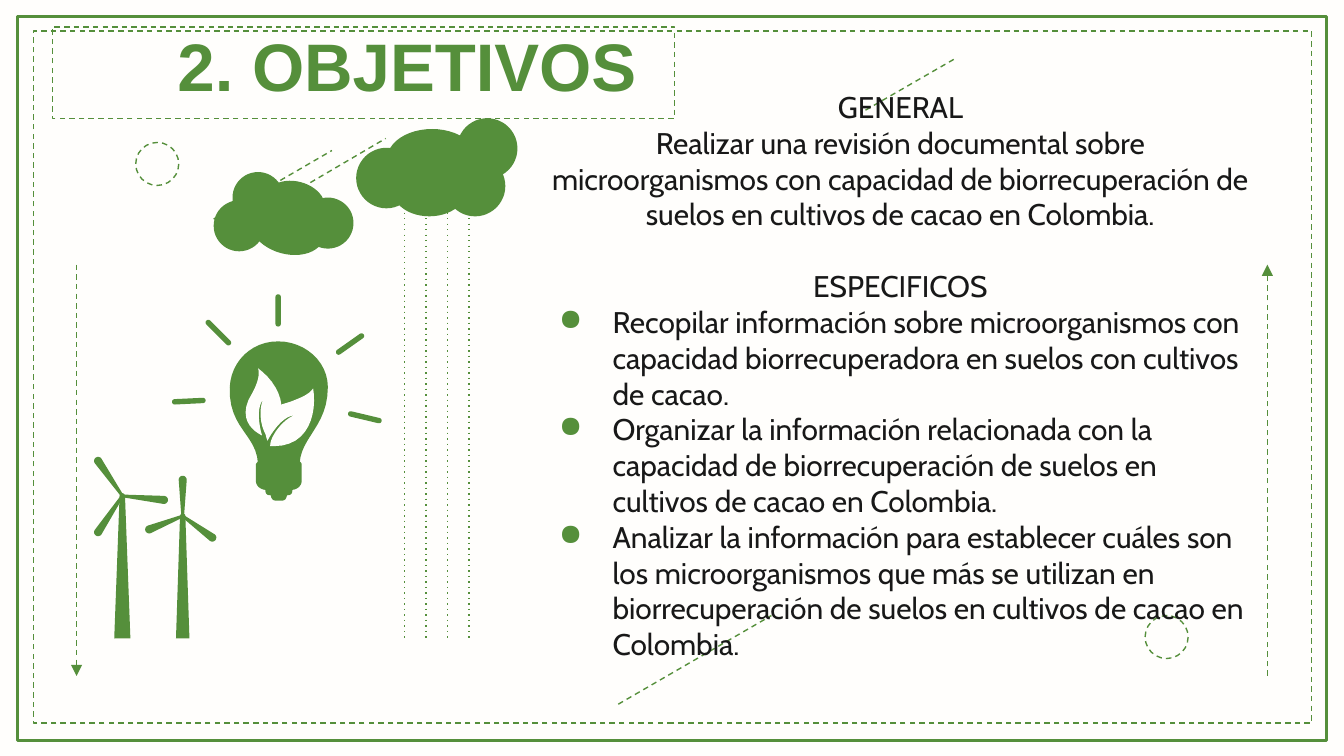
from dataclasses import dataclass
from math import atan2, cos, pi, sin
from typing import Optional

from lxml.etree import SubElement
from pptx import Presentation
from pptx.dml.color import RGBColor
from pptx.enum.shapes import MSO_CONNECTOR, MSO_SHAPE
from pptx.enum.text import MSO_ANCHOR, MSO_AUTO_SIZE, PP_ALIGN
from pptx.oxml.ns import qn
from pptx.util import Emu, Inches, Pt

GREEN = RGBColor(0x55, 0x8F, 0x3B)
CREAM = RGBColor(0xFF, 0xFE, 0xFC)
INK = RGBColor(0x18, 0x18, 0x18)
SLIDE_WIDTH, SLIDE_HEIGHT = Inches(10), Inches(5.625)
CELL = SLIDE_WIDTH // 10  # square grid: ten columns across the slide

Point = tuple[float, float]


@dataclass(frozen=True)
class Area:
    """A place on the grid, in columns and rows."""
    left: float
    top: float
    width: float
    height: float

    def emu(self) -> list[Emu]:
        return [cells(v) for v in (self.left, self.top, self.width, self.height)]


@dataclass(frozen=True)
class Stroke:
    start: Point
    end: Point
    dash: str = "dash"
    arrow: bool = False


@dataclass(frozen=True)
class Cloud:
    puffs: tuple[Area, ...]
    rotation: float = 0
    rain: tuple[Stroke, ...] = ()


@dataclass(frozen=True)
class Turbine:
    hub: Point
    foot_half_width: float
    blade_tips: tuple[Point, ...]


@dataclass(frozen=True)
class Outline:
    """Steps are line ends (2 numbers) or Bezier curves (6 numbers)."""
    steps: tuple[tuple[float, ...], ...]
    fill: RGBColor = GREEN
    edged: bool = False


GROUND = 4.75
FRAMES = ((Area(0.13, 0.12, 9.74, 5.39), 1.5, None),
          (Area(0.25, 0.23, 9.51, 5.15), 0.75, "dash"))
RINGS = (Area(1.01, 1.06, 0.32, 0.32), Area(8.52, 4.58, 0.32, 0.32))
STROKES = (
    Stroke((4.6, 5.24), (5.74, 4.58)), Stroke((6.44, 0.82), (7.1, 0.44)),
    Stroke((0.57, 1.97), (0.57, 5.03), arrow=True),
    Stroke((9.43, 5.03), (9.43, 1.97), arrow=True),
    Stroke((2, 1.54), (2.87, 1.03)), Stroke((1.59, 1.63), (2.47, 1.12)),
)
CLOUDS = (
    Cloud((Area(2.25, 1.47, 0.38, 0.38), Area(1.86, 1.51, 0.56, 0.38),
           Area(1.98, 1.35, 0.44, 0.3), Area(1.59, 1.49, 0.38, 0.38),
           Area(1.73, 1.28, 0.38, 0.38)), rotation=195),
    Cloud((Area(2.65, 1.1, 0.45, 0.45), Area(2.88, 0.96, 0.67, 0.45),
           Area(2.93, 1.25, 0.53, 0.36), Area(3.4, 0.88, 0.45, 0.45),
           Area(3.31, 1.16, 0.45, 0.45)),
          rain=tuple(Stroke((3.01 + 0.16 * i, 1.5), (3.01 + 0.16 * i, GROUND), "dot")
                     for i in range(4))),
)
TURBINES = (
    Turbine((0.91, 3.69), 0.06, ((0.73, 3.43), (1.22, 3.72), (0.73, 3.96))),
    Turbine((1.36, 3.84), 0.05, ((1.36, 3.57), (1.58, 4), (1.11, 3.94))),
)
BULB = (
    Outline(((2.02, 3.68), (2.02, 3.7, 2.03, 3.72, 2.05, 3.72), (2.1, 3.72),
             (2.12, 3.72, 2.13, 3.7, 2.13, 3.68)), edged=True),
    Outline(((2.07, 2.54), (1.87, 2.54, 1.72, 2.69, 1.71, 2.88),
             (1.7, 3.19, 1.91, 3.23, 1.92, 3.45), (2.23, 3.45),
             (2.24, 3.25, 2.44, 3.17, 2.44, 2.88),
             (2.44, 2.69, 2.27, 2.54, 2.07, 2.54))),
    Outline(((1.93, 3.44), (1.92, 3.44, 1.91, 3.45, 1.91, 3.46), (1.91, 3.58),
             (1.91, 3.61, 1.94, 3.64, 1.98, 3.64), (2.17, 3.64),
             (2.21, 3.64, 2.24, 3.61, 2.24, 3.58), (2.24, 3.46),
             (2.24, 3.45, 2.24, 3.45, 2.23, 3.44)), edged=True),
    Outline(((1.98, 3.64), (1.98, 3.65), (1.98, 3.67, 1.99, 3.68, 2.01, 3.68),
             (2.14, 3.68), (2.16, 3.68, 2.17, 3.67, 2.17, 3.65), (2.17, 3.64)),
            edged=True),
)
LEAVES = (
    Outline(((1.92, 2.74), (1.94, 2.8, 1.9, 2.88, 1.88, 2.92),
             (1.73, 3.15, 1.95, 3.24, 1.95, 3.24),
             (1.95, 3.24, 1.89, 3.05, 1.96, 2.97),
             (1.92, 3.05, 1.94, 3.19, 1.99, 3.25),
             (2.19, 3.07, 2.07, 2.85, 1.92, 2.74)), CREAM),
    Outline(((2.33, 2.89), (2.3, 2.94, 2.21, 2.97, 2.16, 2.99),
             (1.89, 3.05, 1.99, 3.28, 1.99, 3.28),
             (1.99, 3.28, 2.08, 3.1, 2.19, 3.09),
             (2.11, 3.12, 2.01, 3.24, 2.01, 3.32),
             (2.02, 3.32, 2.03, 3.32, 2.04, 3.32),
             (2.3, 3.32, 2.36, 3.07, 2.33, 2.89)), CREAM),
)
RAYS = (((2.07, 2.21), (2.07, 2.41)), ((2.69, 2.5), (2.52, 2.62)),
        ((2.61, 3.08), (2.82, 3.13)), ((1.51, 2.98), (1.3, 2.99)),
        ((1.55, 2.4), (1.7, 2.55)))

GENERAL = ("Realizar una revisión documental sobre microorganismos con capacidad de "
           "biorrecuperación de suelos en cultivos de cacao en Colombia.")
SPECIFIC = (
    "Recopilar información sobre microorganismos con capacidad biorrecuperadora en "
    "suelos con cultivos de cacao.",
    "Organizar la información relacionada con la capacidad de biorrecuperación de "
    "suelos en cultivos de cacao en Colombia.",
    "Analizar la información para establecer cuáles son los microorganismos que más se "
    "utilizan en biorrecuperación de suelos en cultivos de cacao en Colombia.",
)


def cells(count: float) -> Emu:
    return Emu(round(count * CELL))


def style_line(shape, width: float = 0.75, dash: Optional[str] = None) -> None:
    shape.line.color.rgb = GREEN
    shape.line.width = Pt(width)
    if dash:
        SubElement(shape.get_or_add_ln(), qn("a:prstDash"), val=dash)


def style_fill(shape, fill: Optional[RGBColor]) -> None:
    shape.shadow.inherit = False
    if fill is None:
        shape.fill.background()
    else:
        shape.fill.solid()
        shape.fill.fore_color.rgb = fill


def add_preset(shapes, kind, area: Area, fill: Optional[RGBColor]):
    shape = shapes.add_shape(kind, *area.emu())
    style_fill(shape, fill)
    return shape


def add_stroke(shapes, stroke: Stroke) -> None:
    ends = [cells(v) for v in stroke.start + stroke.end]
    connector = shapes.add_connector(MSO_CONNECTOR.STRAIGHT, *ends)
    style_line(connector, dash=stroke.dash)
    if stroke.arrow:
        SubElement(connector.get_or_add_ln(), qn("a:tailEnd"), type="triangle")
    SubElement(connector.element.spPr, qn("a:effectLst"))


def add_polygon(shapes, points: list[Point], fill: RGBColor = GREEN):
    corners = [(cells(x), cells(y)) for x, y in points]
    builder = shapes.build_freeform(*corners[0])
    builder.add_line_segments(corners[1:], close=True)
    shape = builder.convert_to_shape()
    style_fill(shape, fill)
    shape.line.fill.background()
    return shape


def add_outline(shapes, outline: Outline, samples: int = 12) -> None:
    points: list[Point] = []
    for step in outline.steps:
        if len(step) == 2:
            points.append(step)
            continue
        controls = (points[-1], step[:2], step[2:4], step[4:])
        for i in range(1, samples + 1):
            t = i / samples
            weights = ((1 - t) ** 3, 3 * t * (1 - t) ** 2, 3 * t * t * (1 - t), t ** 3)
            points.append(tuple(sum(w * c[axis] for w, c in zip(weights, controls))
                                for axis in (0, 1)))
    shape = add_polygon(shapes, points, outline.fill)
    if outline.edged:
        style_line(shape)


def add_bar(shapes, start: Point, end: Point, start_radius: float, end_radius: float) -> None:
    """Draw a round-ended bar that may taper."""
    heading = atan2(end[1] - start[1], end[0] - start[0])
    points = []
    for (x, y), radius, turn in ((end, end_radius, -pi / 2), (start, start_radius, pi / 2)):
        angles = [heading + turn + pi * i / 8 for i in range(9)]
        points += [(x + radius * cos(a), y + radius * sin(a)) for a in angles]
    add_polygon(shapes, points)


def add_cloud(shapes, cloud: Cloud) -> None:
    group = shapes.add_group_shape().shapes
    for area in cloud.puffs:
        puff = add_preset(group, MSO_SHAPE.OVAL, area, GREEN)
        puff.line.fill.background()
        puff.rotation = cloud.rotation
    for drop in cloud.rain:
        add_stroke(group, drop)


def add_turbine(shapes, turbine: Turbine, radius: float = 0.02) -> None:
    x, y = turbine.hub
    foot = turbine.foot_half_width
    add_polygon(shapes, [(x - radius, y), (x - foot, GROUND), (x + foot, GROUND), (x + radius, y)])
    hub = add_preset(shapes, MSO_SHAPE.OVAL,
                     Area(x - radius, y - radius, 2 * radius, 2 * radius), GREEN)
    hub.line.fill.background()
    for tip in turbine.blade_tips:
        add_bar(shapes, turbine.hub, tip, 0.01, 0.03)


def add_bulb(shapes) -> None:
    group = shapes.add_group_shape().shapes
    for outline in BULB:
        add_outline(group, outline)
    for start, end in RAYS:
        add_bar(group, start, end, 0.02, 0.02)
    for leaf in LEAVES:
        add_outline(group, leaf)


def format_title(title) -> None:
    title.left, title.top, title.width, title.height = Area(0.39, 0.2, 4.63, 0.68).emu()
    style_line(title, dash="dash")
    frame = title.text_frame
    frame.text = "2. OBJETIVOS"
    frame.auto_size = MSO_AUTO_SIZE.NONE
    frame.vertical_anchor = MSO_ANCHOR.BOTTOM
    frame.margin_left = cells(0.93)
    frame.margin_right = frame.margin_top = frame.margin_bottom = cells(0.1)
    para = frame.paragraphs[0]
    para.alignment = PP_ALIGN.LEFT
    font = para.runs[0].font
    font.name, font.size, font.bold = "Arial", Pt(36), True
    font.color.rgb = GREEN


def add_bullet(para) -> None:
    properties = para._p.get_or_add_pPr()
    properties.set("marL", str(cells(0.5)))
    properties.set("indent", str(cells(-0.4)))
    color = SubElement(properties, qn("a:buClr"))
    SubElement(color, qn("a:srgbClr"), val=str(GREEN))
    SubElement(properties, qn("a:buChar"), char="●")


def add_objectives(shapes) -> None:
    frame = shapes.add_textbox(*Area(3.96, 0.56, 5.48, 4.8).emu()).text_frame
    frame.word_wrap = True
    frame.margin_left = frame.margin_right = frame.margin_top = frame.margin_bottom = cells(0.1)
    frame.text = "\n".join(("GENERAL", GENERAL, "ESPECIFICOS", *SPECIFIC))
    for index, para in enumerate(frame.paragraphs):
        if index < 3:
            para.alignment = PP_ALIGN.CENTER
        else:
            add_bullet(para)
        font = para.runs[0].font
        font.name, font.size = "Cabin", Pt(16)
        font.color.rgb = INK
    frame.paragraphs[2].space_before = Pt(19.2)


def main() -> None:
    deck = Presentation()
    deck.slide_width, deck.slide_height = SLIDE_WIDTH, SLIDE_HEIGHT
    page = deck.slides.add_slide(deck.slide_layouts[5])
    page.background.fill.solid()
    page.background.fill.fore_color.rgb = CREAM
    shapes = page.shapes
    format_title(shapes.title)
    for area, width, dash in FRAMES:
        style_line(add_preset(shapes, MSO_SHAPE.RECTANGLE, area, None), width, dash)
    for area in RINGS:
        style_line(add_preset(shapes, MSO_SHAPE.OVAL, area, CREAM), dash="dash")
    for stroke in STROKES:
        add_stroke(shapes, stroke)
    add_objectives(shapes)
    add_bulb(shapes)
    turbines = shapes.add_group_shape().shapes
    for turbine in TURBINES:
        add_turbine(turbines, turbine)
    for cloud in CLOUDS:
        add_cloud(shapes, cloud)
    deck.save("out.pptx")


if __name__ == "__main__":
    main()
